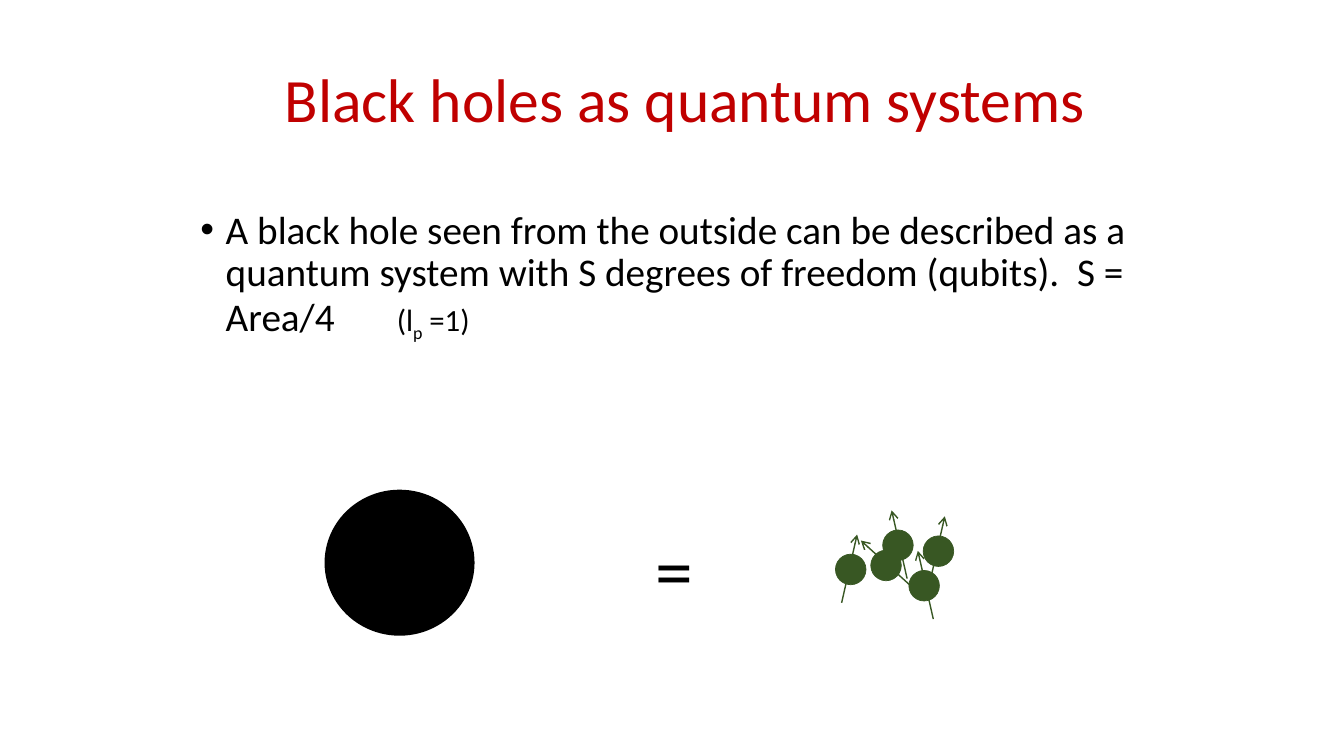
"""Builds a slide that equates a black hole with a system of qubits."""
import math

from lxml import etree
from pptx import Presentation
from pptx import util as u
from pptx.dml.color import RGBColor
from pptx.enum import shapes, text
from pptx.oxml.ns import qn


def color(value):
    """Turn a hex string into a colour."""
    return RGBColor.from_string(value)


class SlideBuilder:
    """Holds the style and the current slide."""

    font = "Calibri"
    black = "000000"
    title_red = "C00000"
    qubit_green = "385723"
    qubit_size = 0.77
    spin_tail = (0.23, 0.84)
    spin_head = (-0.16, -0.88)

    def __init__(self, slide):
        """Start on the given slide."""
        self.slide = slide

    def style_run(self, run, size, fill):
        """Set the font of one run."""
        run.font.name = self.font
        run.font.size = u.Pt(size)
        run.font.color.rgb = color(fill)

    def text_box(self, box, runs, fill, anchor=text.MSO_ANCHOR.TOP, wrap=True):
        """Add a text box of (wording, size) runs and return its paragraph."""
        shape = self.slide.shapes.add_textbox(*map(u.Cm, box))
        shape.text_frame.word_wrap = wrap
        shape.text_frame.vertical_anchor = anchor
        paragraph = shape.text_frame.paragraphs[0]
        for wording, size in runs:
            run = paragraph.add_run()
            run.text = wording
            self.style_run(run, size, fill)
        return paragraph

    def bullet(self, paragraph, indent, tab):
        """Give a paragraph a hanging bullet and one tab stop."""
        properties = paragraph._p.get_or_add_pPr()
        properties.set("marL", str(u.Cm(indent)))
        properties.set("indent", str(-u.Cm(indent)))
        etree.SubElement(properties, qn("a:buFont"), typeface="Arial")
        etree.SubElement(properties, qn("a:buChar"), char="•")
        tabs = etree.SubElement(properties, qn("a:tabLst"))
        etree.SubElement(tabs, qn("a:tab"), pos=str(u.Cm(tab)), algn="l")

    def ellipse(self, parent, box, fill, line_width=0):
        """Add a filled ellipse, outlined if a line width is given."""
        shape = parent.add_shape(shapes.MSO_SHAPE.OVAL, *map(u.Cm, box))
        shape.shadow.inherit = False
        shape.fill.solid()
        shape.fill.fore_color.rgb = color(fill)
        if line_width:
            shape.line.color.rgb = color(fill)
            shape.line.width = u.Pt(line_width)
        else:
            shape.line.fill.background()

    def arrow(self, parent, start, end, fill, width):
        """Add a straight line with an open arrowhead at its end."""
        connector = parent.add_connector(
            shapes.MSO_CONNECTOR.STRAIGHT, *map(u.Cm, (*start, *end)))
        connector.line.color.rgb = color(fill)
        connector.line.width = u.Pt(width)
        etree.SubElement(connector.line._get_or_add_ln(), qn("a:tailEnd"), type="arrow")
        etree.SubElement(connector._element.spPr, qn("a:effectLst"))

    def qubit(self, x, y, mirror=1, degrees=0):
        """Add a ball centred on x, y with a mirrored or turned spin arrow."""
        cosine, sine = math.cos(math.radians(degrees)), math.sin(math.radians(degrees))

        def place(point):
            """Move a spin point to its spot on the slide."""
            across, down = mirror * point[0], point[1]
            return x + across * cosine - down * sine, y + across * sine + down * cosine

        parent = self.slide.shapes.add_group_shape().shapes
        size = self.qubit_size
        self.ellipse(parent, (x - size / 2, y - size / 2, size, size), self.qubit_green, 0.5)
        self.arrow(parent, place(self.spin_tail), place(self.spin_head), self.qubit_green, 1)


def main():
    """Build and save the slide."""
    presentation = Presentation()
    presentation.slide_width, presentation.slide_height = u.Cm(33.87), u.Cm(19.05)
    slide = presentation.slides.add_slide(presentation.slide_layouts[6])
    builder = SlideBuilder(slide)

    title = builder.text_box((6.93, 0.99, 22.86, 3.18), [("Black holes as quantum systems", 44)],
                             builder.title_red, text.MSO_ANCHOR.MIDDLE)
    title.line_spacing = 0.9

    statement = ("A black hole seen from the outside can be described as a quantum system "
                 "with S degrees of freedom (qubits).  S = Area/4\t")
    body = builder.text_box((4.8, 5.18, 24.38, 4.98),
                            [(statement, 28), ("(l", 22), ("p", 22), (" =1)", 22)], builder.black)
    body.line_spacing = 0.9
    body.space_before = u.Pt(10)
    builder.bullet(body, indent=0.64, tab=4.95)
    body.runs[2].font._element.set("baseline", "-25000")

    builder.ellipse(slide.shapes, (8.18, 12.34, 3.78, 3.68), builder.black)
    qubits = [(22.63, 13.74), (23.65, 13.89, -1), (21.44, 14.35, -1),
              (22.33, 14.25, 1, -35), (23.29, 14.76)]
    for qubit in qubits:
        builder.qubit(*qubit)
    builder.text_box((16.26, 13.06, 1.47, 2.57), [("=", 54)], builder.black, wrap=False)

    presentation.save("out.pptx")


if __name__ == "__main__":
    main()
